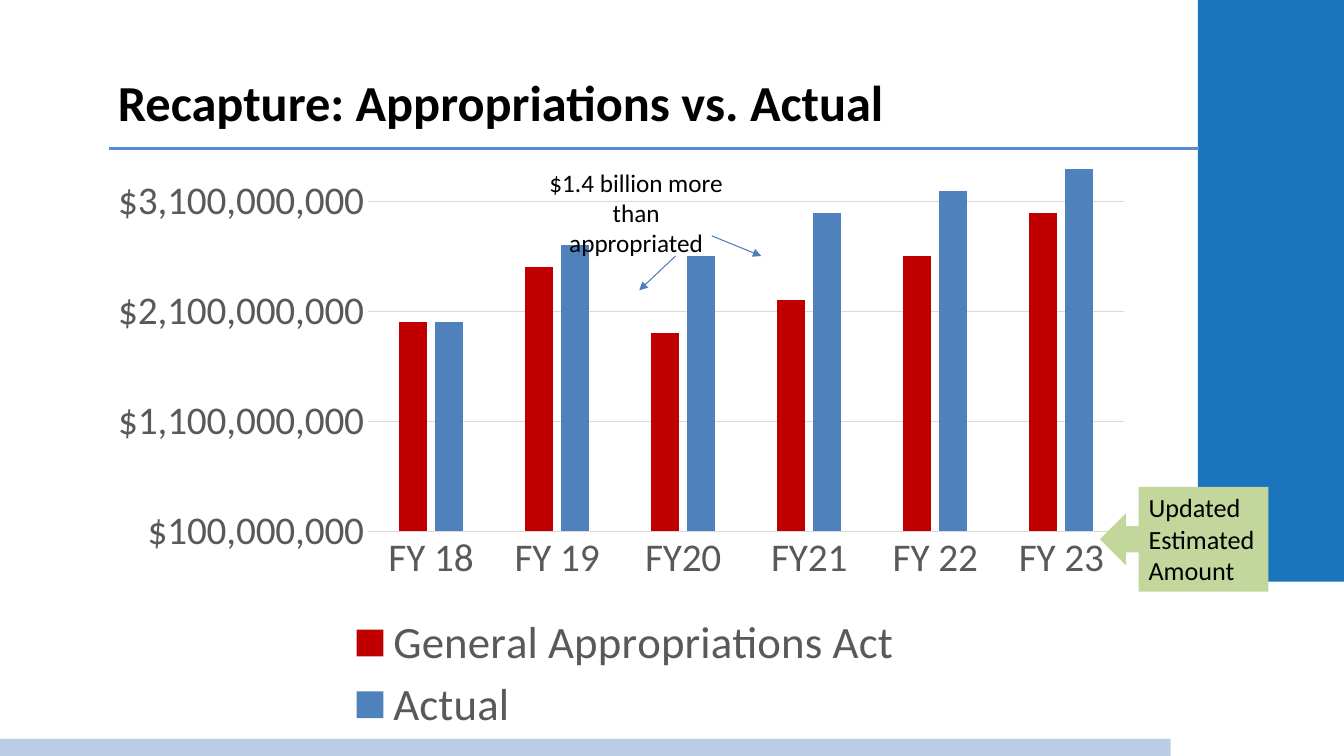
import pptx
import pptx.util
import pptx.chart.data
import pptx.dml.color
import pptx.enum.chart
import pptx.enum.shapes
import pptx.enum.text
import pptx.oxml
import pptx.oxml.ns
from dataclasses import dataclass

Inches = pptx.util.Inches
Pt = pptx.util.Pt
Kind = pptx.enum.shapes.MSO_SHAPE
Align = pptx.enum.text.PP_ALIGN
Anchor = pptx.enum.text.MSO_ANCHOR
qn = pptx.oxml.ns.qn


@dataclass(frozen=True)
class Theme:
    font: str = "Calibri"
    black: str = "000000"
    white: str = "FFFFFF"
    gray: str = "595959"
    grid: str = "D9D9D9"
    blue: str = "1B75BC"
    pale: str = "B9CDE5"
    rule: str = "558ED5"
    arrow: str = "4B7EBC"
    green: str = "C3D69B"
    bars: tuple = ("C00000", "4F81BD")
    title: float = 36
    note: float = 18
    call: float = 18.7
    base: float = 10
    axis: float = 28
    legend: float = 32


def color(code):
    return pptx.dml.color.RGBColor.from_string(code)


class Page:
    def __init__(self, deck, theme):
        self.theme = theme
        self.slide = deck.slides.add_slide(deck.slide_layouts[6])
        self.shapes = self.slide.shapes

    def style(self, font, size, code, bold=False):
        font.name = self.theme.font
        font.size = Pt(size)
        font.bold = bold
        font.color.rgb = color(code)

    def label(self, shape, words, size, align=Align.LEFT, anchor=Anchor.TOP, bold=False):
        frame = shape.text_frame
        frame.word_wrap = True
        frame.vertical_anchor = anchor
        frame.text = words
        para = frame.paragraphs[0]
        para.alignment = align
        self.style(para.runs[0].font, size, self.theme.black, bold)

    def block(self, box, fill, kind=Kind.RECTANGLE):
        shape = self.shapes.add_shape(kind, *map(Inches, box))
        shape.shadow.inherit = False
        shape.fill.solid()
        shape.fill.fore_color.rgb = color(fill)
        shape.line.fill.background()
        return shape

    def text(self, box, words, size, **look):
        shape = self.shapes.add_textbox(*map(Inches, box))
        self.label(shape, words, size, **look)

    def line(self, start, end, code, width, arrow=False):
        line = self.shapes.add_connector(
            pptx.enum.shapes.MSO_CONNECTOR.STRAIGHT, *map(Inches, start + end))
        line.line.color.rgb = color(code)
        line.line.width = Pt(width)
        props = line._element.spPr
        if arrow:
            tail = pptx.oxml.parse_xml(
                f'<a:tailEnd {pptx.oxml.ns.nsdecls("a")} type="triangle"/>')
            props.find(qn("a:ln")).append(tail)
        props.append(props.makeelement(qn("a:effectLst"), {}))

    def place(self, part, box, inner=False):
        for old in part.findall(qn("c:layout")):
            part.remove(old)
        target = '<c:layoutTarget val="inner"/>' if inner else ""
        modes = "".join(f'<c:{key}Mode val="edge"/>' for key in "xy")
        sides = "".join(f'<c:{key} val="{val}"/>' for key, val in zip("xywh", box))
        layout = pptx.oxml.parse_xml(
            f'<c:layout {pptx.oxml.ns.nsdecls("c")}><c:manualLayout>'
            f'{target}{modes}{sides}</c:manualLayout></c:layout>')
        if inner:
            part.insert(0, layout)
        else:
            part.find(qn("c:legendPos")).addnext(layout)

    def chart(self, box, cats, rows):
        theme, enum = self.theme, pptx.enum.chart
        data = pptx.chart.data.CategoryChartData(number_format='"$"#,##0')
        data.categories = cats
        for name, vals in rows.items():
            data.add_series(name, [val * 1_000_000_000 for val in vals])
        chart = self.shapes.add_chart(
            enum.XL_CHART_TYPE.COLUMN_CLUSTERED, *map(Inches, box), data).chart
        self.style(chart.font, theme.base, theme.black)
        chart.has_title = False
        plot = chart.plots[0]
        plot.gap_width, plot.overlap = 219, -27
        plot.vary_by_categories = False
        for row, code in zip(plot.series, theme.bars):
            row.format.fill.solid()
            row.format.fill.fore_color.rgb = color(code)

        cat, val = chart.category_axis, chart.value_axis
        for axis in (cat, val):
            axis.major_tick_mark = axis.minor_tick_mark = enum.XL_TICK_MARK.NONE
            self.style(axis.tick_labels.font, theme.axis, theme.gray)
        val.minimum_scale = 100_000_000
        val.maximum_scale = 4_000_000_000
        val.major_unit = 1_000_000_000
        val.tick_labels.number_format = '"$"#,##0'
        val.tick_labels.number_format_is_linked = False
        val.format.line.fill.background()
        for line in (cat.format.line, val.major_gridlines.format.line):
            line.color.rgb = color(theme.grid)
            line.width = Pt(0.75)

        chart.has_legend = True
        legend = chart.legend
        legend.position = enum.XL_LEGEND_POSITION.BOTTOM
        legend.include_in_layout = False
        self.style(legend.font, theme.legend, theme.gray)
        self.place(plot._element.getparent(), (0.26, 0.02, 0.72, 0.66), inner=True)
        self.place(legend._element, (0.24, 0.8, 0.53, 0.2))


def main():
    deck = pptx.Presentation()
    deck.slide_width, deck.slide_height = Inches(13.33), Inches(7.5)
    theme = Theme()
    page = Page(deck, theme)

    page.block((11.88, 0, 1.45, 5.77), theme.blue)
    page.block((0, 7.33, 11.61, 0.17), theme.pale)
    page.line((11.89, 1.47), (1.08, 1.47), theme.rule, 2.25)
    page.chart(
        (0.94, 0.89, 10.42, 6.44),
        ("FY 18", "FY 19", "FY20", "FY21", "FY 22", "FY 23"),
        {"General Appropriations Act": (2, 2.5, 1.9, 2.2, 2.6, 3),
         "Actual": (2, 2.7, 2.6, 3, 3.2, 3.4)})

    call = page.block((10.91, 4.83, 1.67, 1.04), theme.green, Kind.LEFT_ARROW_CALLOUT)
    for spot, ratio in enumerate((0.25, 0.25, 0.25, 0.77)):
        call.adjustments[spot] = ratio
    page.label(call, "Updated Estimated Amount", theme.call)

    page.block((2.33, 0.92, 6.33, 0.39), theme.white)
    page.text((1.07, 0.59, 8.86, 0.83), "Recapture: Appropriations vs. Actual",
              theme.title, anchor=Anchor.MIDDLE, bold=True)
    for start, end in (((6.7, 2.54), (6.34, 2.88)), ((7.06, 2.34), (7.55, 2.54))):
        page.line(start, end, theme.arrow, 0.75, arrow=True)
    page.text((5.31, 1.61, 2, 1.01), "$1.4 billion more than appropriated",
              theme.note, align=Align.CENTER)
    deck.save("out.pptx")


if __name__ == "__main__":
    main()
